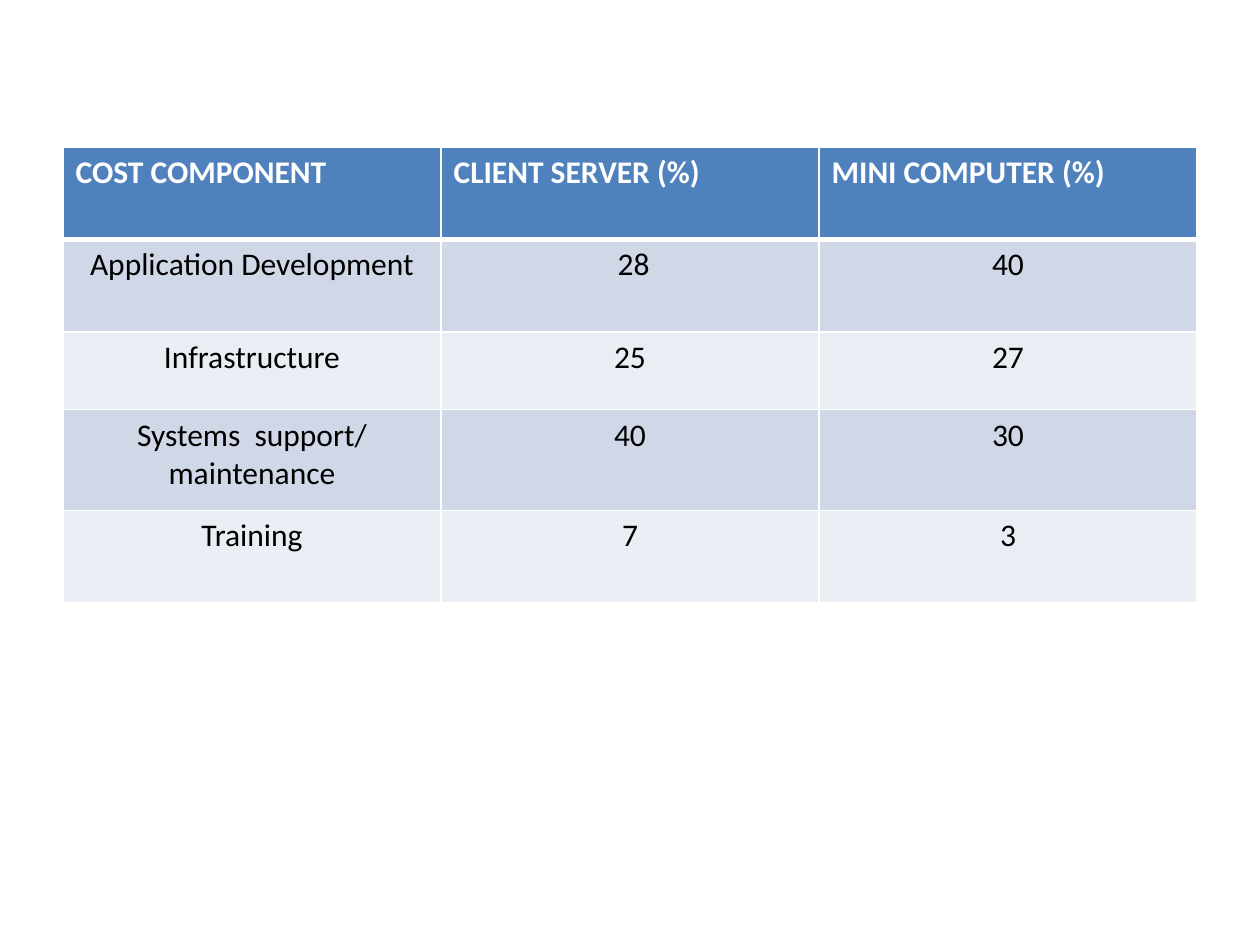
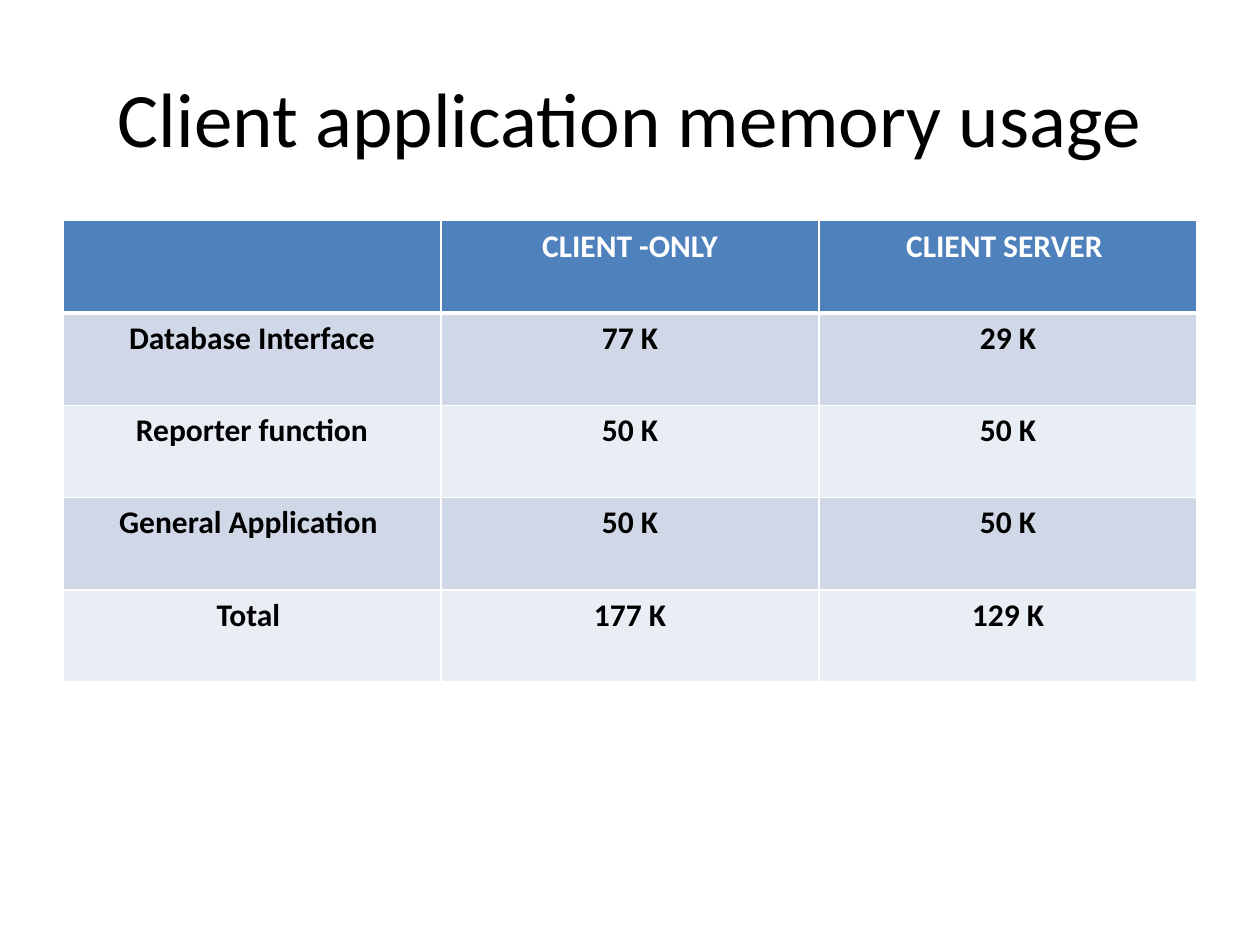
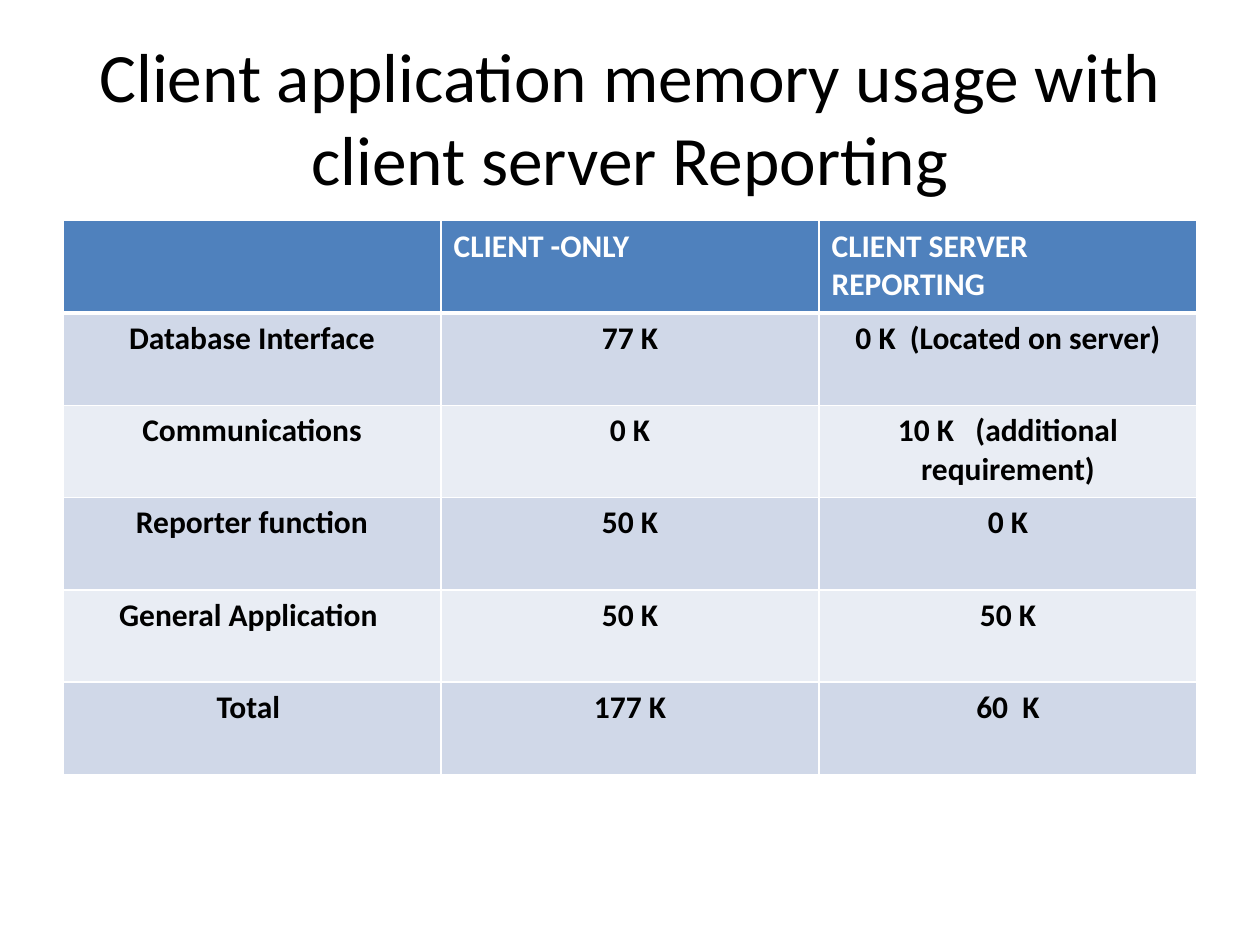
from lxml import etree
from pptx import Presentation
from pptx.dml.color import RGBColor
from pptx.enum.text import MSO_ANCHOR, PP_ALIGN
from pptx.oxml.ns import qn
from pptx.util import Cm, Pt

# Content
ROW = 1.86
SLIDES = [
    {
        "title": None, "top": 2.97, "bold_body": False,
        "header_align": PP_ALIGN.LEFT,
        "heights": [ROW, ROW, 1.57, 2.03, ROW],
        "rows": [
            ("COST COMPONENT", "CLIENT SERVER (%)", "MINI COMPUTER (%)"),
            ("Application Development", " 28", "40"),
            ("Infrastructure", "25", "27"),
            ("Systems  support/ maintenance", "40", "30"),
            ("Training", "7", "3"),
        ],
    },
    {
        "title": "Client application memory usage", "title_size": 44,
        "top": 4.45, "bold_body": True,
        "header_align": PP_ALIGN.CENTER,
        "heights": [ROW] * 5,
        "rows": [
            ("", "CLIENT -ONLY", "CLIENT SERVER "),
            ("Database Interface", "77 K", "29 K"),
            ("Reporter function", "50 K", "50 K"),
            ("General Application ", "50 K", "50 K"),
            ("Total ", "177 K", "129 K"),
        ],
    },
    {
        "title": "Client application memory usage with client server Reporting",
        "title_size": 39.6,
        "top": 4.45, "bold_body": True,
        "header_align": PP_ALIGN.LEFT,
        "heights": [ROW] * 6,
        "rows": [
            ("", "CLIENT -ONLY", "CLIENT SERVER  REPORTING"),
            ("Database Interface", "77 K", "0 K  (Located on server)"),
            ("Communications", "0 K", "10 K   (additional requirement)"),
            ("Reporter function", "50 K", "0 K"),
            ("General Application ", "50 K", "50 K"),
            ("Total ", "177 K", "60  K"),
        ],
    },
]

# Shared style
COLORS = {"header": "4F81BD", "odd": "D0D8E8", "even": "E9EDF4",
          "white": "FFFFFF", "black": "000000"}
FONT = "Calibri"
TABLE_SIZE = 18
LEFT, WIDTH = 1.27, 22.86
TITLE_TOP, TITLE_HEIGHT = 0.76, 3.18
THIN, THICK = 1, 3


def color(name):
    return RGBColor.from_string(COLORS[name])


def add_run(p, text, size, color_name, bold=False):
    r = p.add_run()
    r.text = text
    r.font.name = FONT
    r.font.size = Pt(size)
    r.font.bold = bold
    r.font.color.rgb = color(color_name)


def add_title(s, text, size):
    box = s.shapes.add_textbox(Cm(LEFT), Cm(TITLE_TOP), Cm(WIDTH), Cm(TITLE_HEIGHT))
    tf = box.text_frame
    tf.word_wrap = True
    tf.vertical_anchor = MSO_ANCHOR.MIDDLE
    p = tf.paragraphs[0]
    p.alignment = PP_ALIGN.CENTER
    add_run(p, text, size, "black")


def set_borders(cell, top, bottom):
    tc_pr = cell._tc.get_or_add_tcPr()
    for side, width in (("L", THIN), ("R", THIN), ("T", top), ("B", bottom)):
        ln = etree.SubElement(tc_pr, qn(f"a:ln{side}"), w=str(Pt(width)))
        fill = etree.SubElement(ln, qn("a:solidFill"))
        etree.SubElement(fill, qn("a:srgbClr"), val=COLORS["white"])


def add_table(s, data):
    rows, heights = data["rows"], data["heights"]
    n_cols = len(rows[0])
    table = s.shapes.add_table(len(rows), n_cols, Cm(LEFT), Cm(data["top"]),
                               Cm(WIDTH), Cm(sum(heights))).table
    for col in table.columns:
        col.width = Cm(WIDTH / n_cols)
    for i, (texts, height) in enumerate(zip(rows, heights)):
        table.rows[i].height = Cm(height)
        is_header = i == 0
        band = "header" if is_header else "odd" if i % 2 else "even"
        for j, text in enumerate(texts):
            cell = table.cell(i, j)
            # The rule under the header belongs to both rows it separates
            set_borders(cell, top=THICK if i == 1 else THIN,
                        bottom=THICK if is_header else THIN)
            cell.fill.solid()
            cell.fill.fore_color.rgb = color(band)
            p = cell.text_frame.paragraphs[0]
            p.alignment = data["header_align"] if is_header else PP_ALIGN.CENTER
            if text:
                add_run(p, text, TABLE_SIZE, "white" if is_header else "black",
                        is_header or data["bold_body"])


def main():
    prs = Presentation()
    prs.slide_width, prs.slide_height = Cm(25.4), Cm(19.05)
    for data in SLIDES:
        s = prs.slides.add_slide(prs.slide_layouts[6])
        s.background.fill.solid()
        s.background.fill.fore_color.rgb = color("white")
        if data["title"]:
            add_title(s, data["title"], data["title_size"])
        add_table(s, data)
    prs.save("out.pptx")


if __name__ == "__main__":
    main()
